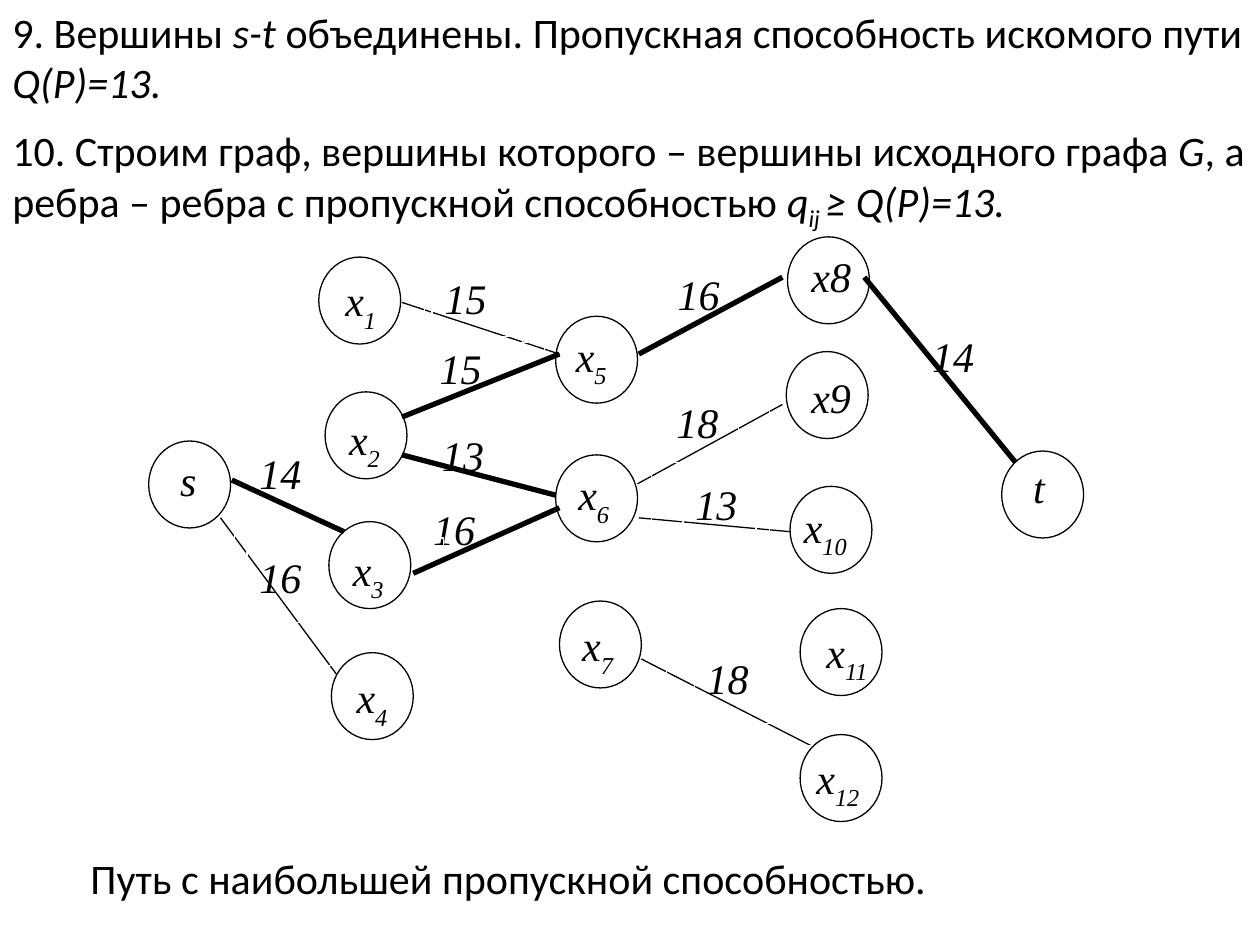
"""Build a slide with a graph of edges whose capacity is at least 13."""
import pptx
import pptx.dml.color
import pptx.enum.shapes
import pptx.enum.text
import pptx.oxml
import pptx.util

Inches = pptx.util.Inches
SHAPES = pptx.enum.shapes.MSO_SHAPE
BLACK, WHITE = "000000", "FFFFFF"
SERIF, SANS = "Times New Roman", "Calibri"
THIN, BOLD = 0.75, 3
NODE_SIZE = (0.65, 0.69)
PLAIN = {"italic": False}
ITALIC = {"italic": True}
SUBSCRIPT = {"italic": True, "baseline": -25}

TEXTS = [
    ((0, 0, 10, 0.91), [
        ("9. Вершины ", PLAIN), ("s-t", ITALIC),
        (" объединены. Пропускная способность искомого пути ", PLAIN),
        ("Q(P)=13.", ITALIC)]),
    ((0, 0.94, 10, 0.91), [
        ("10. Строим граф, вершины которого – вершины исходного графа ", PLAIN),
        ("G", ITALIC), (", а ребра – ребра с пропускной способностью ", PLAIN),
        ("q", ITALIC), ("ij ", SUBSCRIPT), ("≥ Q(P)=13.", ITALIC)]),
    ((0.62, 6.72, 9.06, 0.5), [
        ("Путь с наибольшей пропускной способностью.", PLAIN)]),
]

# name, index, circle corner, label box, label indent
NODES = [
    ("s", "", (1.18, 3.5), (1.1, 3.56, 0.76, 0.81), 0.33),
    ("x", "1", (2.53, 2.04), (2.49, 2.13, 0.88, 0.61), 0.25),
    ("x", "2", (2.58, 3.11), (2.42, 3.23, 0.88, 0.61), 0.35),
    ("x", "3", (2.61, 4.14), (2.62, 4.27, 0.9, 0.61), 0.18),
    ("x", "4", (2.63, 5.18), (2.58, 5.28, 0.93, 0.76), 0.25),
    ("x", "5", (4.41, 2.51), (4.32, 2.57, 0.9, 0.81), 0.25),
    ("x", "6", (4.41, 3.61), (4.41, 3.67, 0.76, 0.77), 0.18),
    ("x", "7", (4.44, 4.77), (4.44, 4.87, 0.85, 0.81), 0.18),
    ("x8", "", (6.25, 1.88), (6.11, 1.94, 0.99, 0.73), 0.33),
    ("x9", "", (6.24, 2.79), (6.11, 2.9, 0.97, 0.72), 0.33),
    ("x", "10", (6.27, 3.86), (6.11, 3.93, 0.97, 0.69), 0.27),
    ("x", "11", (6.35, 4.83), (6.21, 4.92, 0.97, 0.61), 0.35),
    ("x", "12", (6.35, 5.83), (6.21, 5.92, 1.07, 0.72), 0.27),
    ("t", "", (7.95, 3.58), (7.95, 3.61, 0.84, 0.81), 0.25),
]

# capacity, label box, start, end, line width
EDGES = [
    ("14", (1.96, 3.5, 0.76, 0.61), (1.84, 3.81), (2.73, 4.22), BOLD),
    ("16", (1.96, 4.33, 0.76, 0.61), (1.75, 4.11), (2.67, 5.35), THIN),
    ("15", (3.43, 2.11, 0.76, 0.61), (3.19, 2.4), (4.44, 2.81), THIN),
    ("15", (3.39, 2.67, 0.76, 0.61), (3.19, 3.31), (4.44, 2.81), BOLD),
    ("13", (3.41, 3.36, 0.76, 0.61), (3.19, 3.61), (4.41, 3.93), BOLD),
    ("16", (3.34, 3.95, 0.77, 0.61), (3.28, 4.55), (4.44, 4.03), BOLD),
    ("16", (5.28, 2.08, 0.77, 0.61), (5.07, 2.81), (6.21, 2.2), BOLD),
    ("18", (5.27, 3.1, 0.59, 0.57), (6.21, 3.21), (5.06, 3.84), THIN),
    ("13", (5.42, 3.75, 0.58, 0.61), (5.07, 4.11), (6.27, 4.22), THIN),
    ("18", (5.51, 5.13, 0.76, 0.61), (5.09, 5.23), (6.44, 5.92), THIN),
    ("14", (7.3, 2.57, 0.76, 0.61), (6.86, 2.2), (8.06, 3.67), BOLD),
]


def color(value):
    return pptx.dml.color.RGBColor.from_string(value)


def write(box, spans, font, indent=0.1):
    frame = box.text_frame
    settings = {"word_wrap": True, "margin_left": Inches(indent),
                "vertical_anchor": pptx.enum.text.MSO_ANCHOR.TOP}
    for name, value in settings.items():
        setattr(frame, name, value)
    para = frame.paragraphs[0]
    para.alignment = pptx.enum.text.PP_ALIGN.LEFT
    for text, style in spans:
        span = para.add_run()
        span.text = text
        form = {"name": font, "size": pptx.util.Pt(24), "italic": style["italic"]}
        for name, value in form.items():
            setattr(span.font, name, value)
        span.font.color.rgb = color(BLACK)
        if "baseline" in style:
            span._r.get_or_add_rPr().set("baseline", str(style["baseline"] * 1000))


def add_outline(page, kind, place, line_color):
    shape = page.shapes.add_shape(kind, *map(Inches, place))
    shape.shadow.inherit = False
    shape.fill.background()
    shape.line.color.rgb = color(line_color)
    shape.line.width = pptx.util.Pt(THIN)
    return shape


def add_label(page, place, text, index="", indent=0.1):
    spans = [(text, ITALIC)]
    if index:
        spans.append((index, {"italic": True, "baseline": -30}))
    write(add_outline(page, SHAPES.RECTANGLE, place, WHITE), spans, SERIF, indent)


def add_edges(page, width):
    for _, _, start, end, edge_width in EDGES:
        if edge_width == width:
            edge = page.shapes.add_connector(
                pptx.enum.shapes.MSO_CONNECTOR.STRAIGHT, *map(Inches, start + end))
            edge.line.color.rgb = color(BLACK)
            edge.line.width = pptx.util.Pt(width)
            edge._element.spPr.append(pptx.oxml.parse_xml(
                '<a:effectLst xmlns:a="http://schemas.openxmlformats.org/drawingml/2006/main"/>'))


def main():
    deck = pptx.Presentation()
    deck.slide_width, deck.slide_height = Inches(10), Inches(7.5)
    page = deck.slides.add_slide(deck.slide_layouts[6])
    for place, spans in TEXTS:
        write(page.shapes.add_textbox(*map(Inches, place)), spans, SANS)
    add_edges(page, THIN)
    for capacity, place, *_ in EDGES:
        add_label(page, place, capacity)
    for name, index, _, place, indent in NODES:
        add_label(page, place, name, index, indent)
    for _, _, corner, _, _ in NODES:
        add_outline(page, SHAPES.OVAL, corner + NODE_SIZE, BLACK)
    add_edges(page, BOLD)
    deck.save("out.pptx")


if __name__ == "__main__":
    main()
